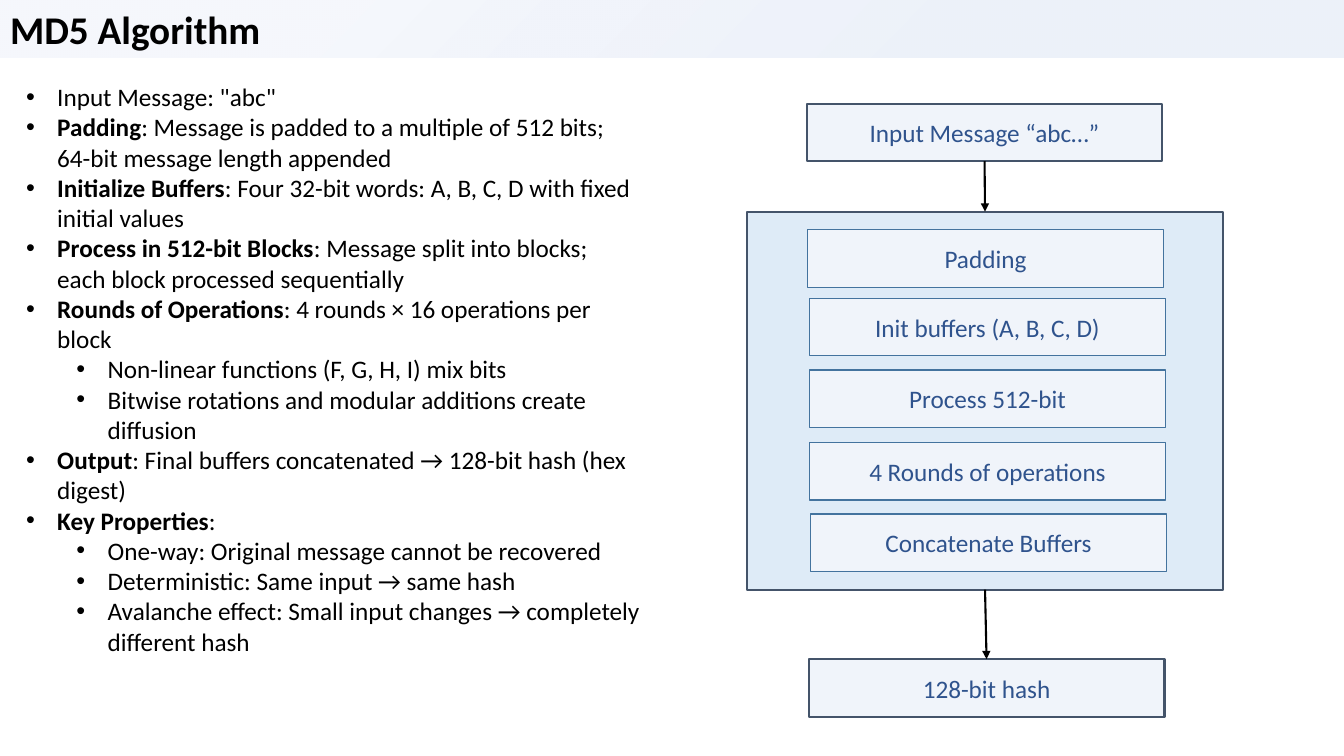
import pptx
import pptx.dml.color
import pptx.enum.shapes
import pptx.enum.text
import pptx.oxml
import pptx.oxml.ns
import pptx.util

Inches = pptx.util.Inches
Pt = pptx.util.Pt
ANCHOR = pptx.enum.text.MSO_ANCHOR
ALIGN = pptx.enum.text.PP_ALIGN
FIT = pptx.enum.text.MSO_AUTO_SIZE

COLORS = {
    "black": "000000",
    "band": "4472C4",
    "panel": "DEEBF7",
    "box": "F0F4FA",
    "frame": "44546A",
    "edge": "43739E",
    "label": "2F538D",
}
FONT = "Calibri"
TITLE = "MD5 Algorithm"
POINTS = [
    (0, "", "Input Message: \"abc\""),
    (0, "Padding", ": Message is padded to a multiple of 512 bits; 64-bit message length appended"),
    (0, "Initialize Buffers", ": Four 32-bit words: A, B, C, D with fixed initial values"),
    (0, "Process in 512-bit Blocks", ": Message split into blocks; each block processed sequentially"),
    (0, "Rounds of Operations", ": 4 rounds × 16 operations per block"),
    (1, "", "Non-linear functions (F, G, H, I) mix bits"),
    (1, "", "Bitwise rotations and modular additions create diffusion"),
    (0, "Output", ": Final buffers concatenated → 128-bit hash (hex digest)"),
    (0, "Key Properties", ":"),
    (1, "", "One-way: Original message cannot be recovered"),
    (1, "", "Deterministic: Same input → same hash"),
    (1, "", "Avalanche effect: Small input changes → completely different hash"),
]
PANEL = (7.41, 2.1, 4.72, 3.75)
BOX_SIZE = (3.53, 0.57)
SOURCE = (8.0, 1.03, "Input Message “abc…”")
RESULT = (8.02, 6.54, "128-bit hash")
STEPS = [
    (8.01, 2.28, "Padding"),
    (8.03, 2.96, "Init buffers (A, B, C, D)"),
    (8.03, 3.67, "Process 512-bit"),
    (8.03, 4.39, "4 Rounds of operations"),
    (8.04, 5.1, "Concatenate Buffers"),
]


def paint(name):
    return pptx.dml.color.RGBColor.from_string(COLORS[name])


def make(tag, attrs=""):
    return pptx.oxml.parse_xml(f"<a:{tag} {pptx.oxml.ns.nsdecls('a')} {attrs}/>")


def style(run, size, color, bold=False):
    run.font.name = FONT
    run.font.size = Pt(size)
    run.font.bold = bold
    run.font.color.rgb = paint(color)


def add_title(slide):
    title = slide.shapes.title
    title.left, title.top = Inches(0), Inches(0)
    title.width, title.height = Inches(13.33), Inches(0.57)
    title.fill.gradient()
    old = title.element.spPr.find(pptx.oxml.ns.qn("a:gradFill"))
    stops = "".join(
        f'<a:gs pos="{pos}000"><a:srgbClr val="{COLORS["band"]}">'
        f'<a:alpha val="{alpha}000"/></a:srgbClr></a:gs>'
        for pos, alpha in [(26, 10), (76, 5)]
    )
    blend = pptx.oxml.parse_xml(
        f'<a:gradFill {pptx.oxml.ns.nsdecls("a")} rotWithShape="1">'
        f'<a:gsLst>{stops}</a:gsLst><a:path path="circle">'
        '<a:fillToRect l="100000" t="100000"/></a:path></a:gradFill>'
    )
    old.getparent().replace(old, blend)
    frame = title.text_frame
    frame.text = TITLE
    frame.auto_size = FIT.NONE
    frame.vertical_anchor = ANCHOR.TOP
    frame.paragraphs[0].alignment = ALIGN.LEFT
    style(frame.paragraphs[0].runs[0], 28, "black", True)


def add_points(slide):
    area = slide.shapes.add_textbox(Inches(0.16), Inches(0.76), Inches(6.3), Inches(5.86))
    frame = area.text_frame
    frame.word_wrap = True
    for i, (level, head, rest) in enumerate(POINTS):
        para = frame.add_paragraph() if i else frame.paragraphs[0]
        para.level = level
        props = para._p.get_or_add_pPr()
        props.set("marL", str(Inches(0.31 + 0.5 * level)))
        props.set("indent", str(Inches(-0.31)))
        props.append(make("buFont", 'typeface="Arial"'))
        props.append(make("buChar", 'char="•"'))
        for text, bold in [(head, True), (rest, False)]:
            if text:
                run = para.add_run()
                run.text = text
                style(run, 18, "black", bold)


def add_rect(slide, place, fill, line, width):
    rect = slide.shapes.add_shape(
        pptx.enum.shapes.MSO_SHAPE.RECTANGLE, *map(Inches, place)
    )
    rect.shadow.inherit = False
    rect.fill.solid()
    rect.fill.fore_color.rgb = paint(fill)
    rect.line.color.rgb = paint(line)
    rect.line.width = Pt(width)
    return rect


def add_box(slide, data, line, width):
    left, top, text = data
    box = add_rect(slide, (left, top, *BOX_SIZE), "box", line, width)
    frame = box.text_frame
    frame.text = text
    frame.vertical_anchor = ANCHOR.MIDDLE
    frame.paragraphs[0].alignment = ALIGN.CENTER
    style(frame.paragraphs[0].runs[0], 18, "label")
    return box


def add_arrow(slide, start, end):
    arrow = slide.shapes.add_connector(
        pptx.enum.shapes.MSO_CONNECTOR.STRAIGHT, 0, 0, 0, 0
    )
    arrow.begin_connect(start, 2)
    arrow.end_connect(end, 0)
    arrow.line.color.rgb = paint("black")
    arrow.line.width = Pt(1.5)
    arrow.line._get_or_add_ln().append(make("tailEnd", 'type="triangle"'))
    arrow.element.spPr.append(make("effectLst"))


def main():
    deck = pptx.Presentation()
    deck.slide_width, deck.slide_height = Inches(13.33), Inches(7.5)
    slide = deck.slides.add_slide(deck.slide_layouts[5])
    add_title(slide)
    add_points(slide)
    panel = add_rect(slide, PANEL, "panel", "frame", 1.5)
    source = add_box(slide, SOURCE, "frame", 1.5)
    for step in STEPS:
        add_box(slide, step, "edge", 1)
    result = add_box(slide, RESULT, "frame", 1.5)
    add_arrow(slide, source, panel)
    add_arrow(slide, panel, result)
    deck.save("out.pptx")


if __name__ == "__main__":
    main()
